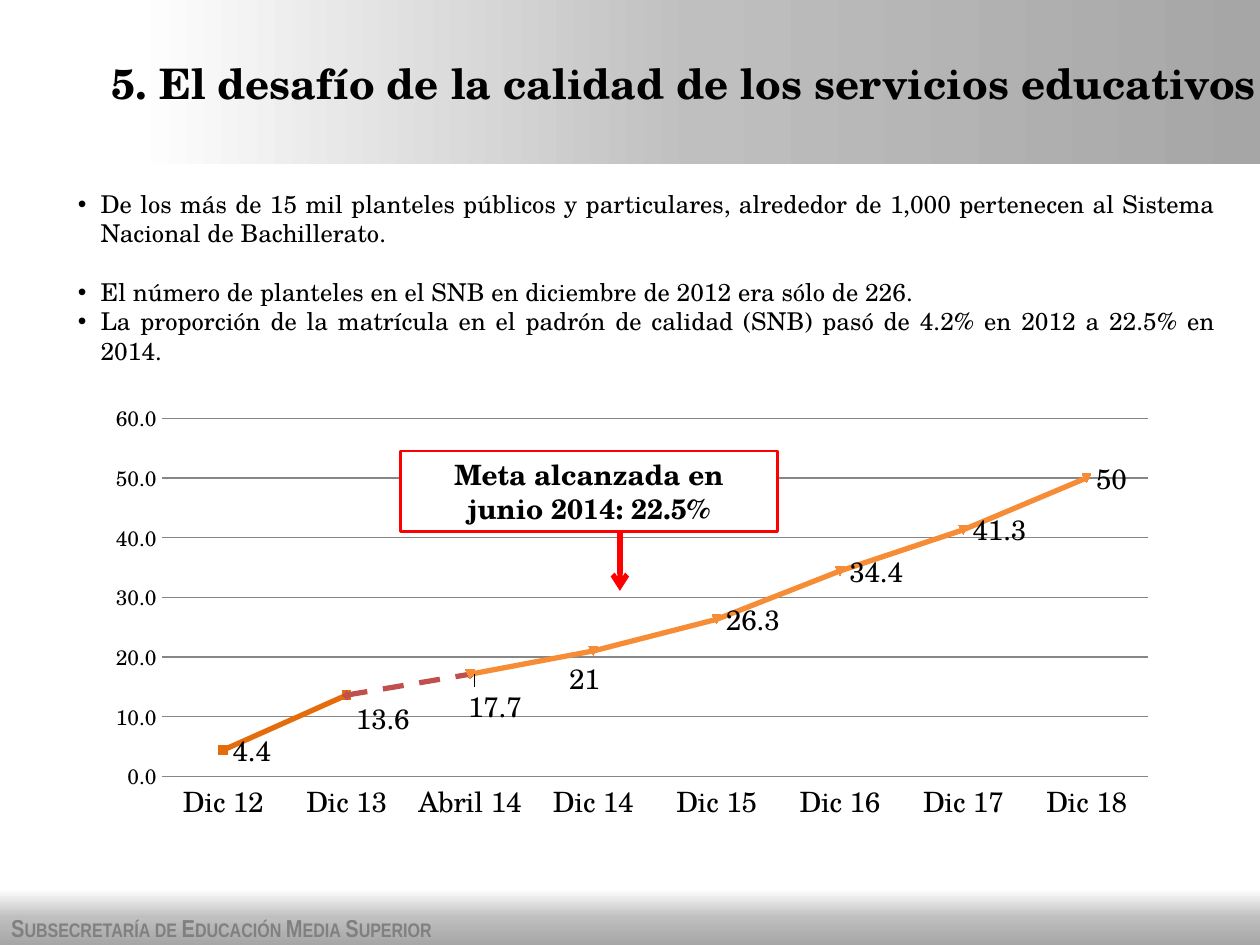
from lxml.etree import SubElement
from pptx import Presentation
from pptx.chart.data import CategoryChartData
from pptx.dml.color import RGBColor
from pptx.enum.chart import XL_CHART_TYPE as ChartType, XL_LABEL_POSITION as LabelPosition
from pptx.enum.chart import XL_MARKER_STYLE as MarkerStyle, XL_TICK_MARK as TickMark
from pptx.enum.dml import MSO_LINE as Dash
from pptx.enum.shapes import MSO_CONNECTOR as Connector, MSO_SHAPE as Shape
from pptx.enum.text import MSO_ANCHOR as Anchor, PP_ALIGN as Align
from pptx.oxml import parse_xml
from pptx.oxml.ns import nsdecls, qn
from pptx.util import Inches, Pt

# The slide is a grid of square cells, ten to the inch
COLUMNS, ROWS = 100, 75
CELL = Inches(0.1)
SERIF = "TeX Gyre Schola"
BLACK, WHITE, RED, GRID_GREY = "000000", "FFFFFF", "FF0000", "868686"

BULLETS = [
    ("De los más de 15 mil planteles públicos y particulares, alrededor de 1,000 "
     "pertenecen al Sistema Nacional de Bachillerato.", 0),
    ("El número de planteles en el SNB en diciembre de 2012 era sólo de 226.", 16.75),
    ("La proporción de la matrícula en el padrón de calidad (SNB) pasó de 4.2% "
     "en 2012 a 22.5% en 2014.", 0),
]
CATEGORIES = ["Dic 12", "Dic 13", "Abril 14", "Dic 14", "Dic 15", "Dic 16", "Dic 17", "Dic 18"]
# Name, values, colour, dash
SERIES = [
    ("Series 1", [4.4, 13.6] + [None] * 6, "E46C0A", None),
    ("Series 2", [None, 13.6, 17.1] + [None] * 5, "C0504D", Dash.DASH),
    ("Series 3", [None, None, 17.1, 21, 26.3, 34.4, 41.3, 50], "F68D36", None),
]
# Series, point, shift as shares of the chart, own wording
MOVED_LABELS = [(1, 1, 0, 0.05, None), (1, 2, -0.01, 0.07, "17.7"), (2, 3, -0.03, 0.06, None)]
HIDDEN_LABELS = [(0, 1), (2, 2)]


def color(hex_code):
    return RGBColor.from_string(hex_code)


def grid(*cells):
    return [int(cell * CELL) for cell in cells]


def style_font(font, size, name=SERIF, fill=BLACK, bold=False):
    font.size, font.name, font.bold = Pt(size), name, bold
    font.color.rgb = color(fill)


def style_line(line, fill, width):
    line.color.rgb = color(fill)
    line.width = Pt(width)


def write(paragraph, text, align=Align.LEFT, small_caps=False, **font_format):
    run = paragraph.add_run()
    run.text = text
    paragraph.alignment = align
    style_font(run.font, **font_format)
    if small_caps:
        run.font._element.set("cap", "small")


def add_text_box(slide, box, anchor=Anchor.TOP):
    frame = slide.shapes.add_textbox(*grid(*box)).text_frame
    frame.word_wrap = True
    frame.vertical_anchor = anchor
    return frame


def add_rectangle(slide, box):
    shape = slide.shapes.add_shape(Shape.RECTANGLE, *grid(*box))
    shape.shadow.inherit = False
    return shape


def add_gradient_band(slide, box, angle):
    band = add_rectangle(slide, box)
    band.line.fill.background()
    stops = "".join(
        f'<a:gs pos="{share * 1000}"><a:srgbClr val="{shade}"/></a:gs>'
        for share, shade in [(0, WHITE), (50, "BFBFBF"), (100, "A6A6A6")])
    band._element.spPr.find(qn("a:prstGeom")).addnext(parse_xml(
        f'<a:gradFill {nsdecls("a")} rotWithShape="1"><a:gsLst>{stops}</a:gsLst>'
        f'<a:lin ang="{angle * 60000}" scaled="0"/></a:gradFill>'))


def add_arrow(slide, *ends):
    arrow = slide.shapes.add_connector(Connector.STRAIGHT, *grid(*ends))
    style_line(arrow.line, RED, 3)
    SubElement(arrow.line._get_or_add_ln(), qn("a:tailEnd"), type="arrow")
    SubElement(arrow._element.spPr, qn("a:effectLst"))


def add_bullets(slide, box, items):
    frame = add_text_box(slide, box)
    for index, (text, gap) in enumerate(items):
        paragraph = frame.add_paragraph() if index else frame.paragraphs[0]
        properties = paragraph._element.get_or_add_pPr()
        properties.set("marL", str(Inches(0.5)))
        properties.set("indent", str(Inches(-0.18)))
        SubElement(properties, qn("a:buFont"), typeface="Arial")
        SubElement(properties, qn("a:buChar"), char="•")
        paragraph.space_before = Pt(gap)
        write(paragraph, text, align=Align.JUSTIFY, size=14)


def manual_layout(**values):
    items = "".join(f'<c:{key} val="{value}"/>' for key, value in values.items())
    return parse_xml(f'<c:layout {nsdecls("c")}><c:manualLayout>{items}'
                     '</c:manualLayout></c:layout>')


def label_element(series, point):
    series.points[point].data_label.position = LabelPosition.RIGHT
    labels = series.data_labels._element
    return next(label for label in labels.findall(qn("c:dLbl"))
                if label.find(qn("c:idx")).get("val") == str(point))


def move_label(series, point, shift_x, shift_y, text):
    label = series.points[point].data_label
    if text:
        write(label.text_frame.paragraphs[0], text, size=16)
    else:
        style_font(label.font, 16)
    index = label_element(series, point).find(qn("c:idx"))
    index.addnext(manual_layout(x=shift_x, y=shift_y))


def hide_label(series, point):
    label = label_element(series, point)
    for child in list(label)[1:]:
        label.remove(child)
    SubElement(label, qn("c:delete"), val="1")


def style_series(series, fill, dash):
    series.smooth = False
    style_line(series.format.line, fill, 3)
    if dash:
        series.format.line.dash_style = dash
    marker = series.marker
    marker.style, marker.size = MarkerStyle.AUTOMATIC, 5
    marker.format.fill.solid()
    marker.format.fill.fore_color.rgb = color(fill)
    marker.format.line.color.rgb = color(fill)
    labels = series.data_labels
    labels.show_value = True
    labels.position = LabelPosition.RIGHT
    style_font(labels.font, 16)


def style_axes(chart):
    for axis, size in [(chart.category_axis, 16), (chart.value_axis, 12)]:
        axis.major_tick_mark = axis.minor_tick_mark = TickMark.NONE
        style_font(axis.tick_labels.font, size)
    style_line(chart.category_axis.format.line, GRID_GREY, 0.75)
    value_axis = chart.value_axis
    value_axis.minimum_scale, value_axis.maximum_scale, value_axis.major_unit = 0, 60, 10
    value_axis.tick_labels.number_format = "0.0"
    value_axis.tick_labels.number_format_is_linked = False
    value_axis.format.line.fill.background()
    style_line(value_axis.major_gridlines.format.line, GRID_GREY, 0.75)


def add_line_chart(slide, box):
    data = CategoryChartData()
    data.categories = CATEGORIES
    for name, values, _, _ in SERIES:
        data.add_series(name, values)
    chart = slide.shapes.add_chart(ChartType.LINE_MARKERS, *grid(*box), data).chart
    chart.has_title = chart.has_legend = False
    style_font(chart.font, 10, name="Calibri")
    plot = chart.plots[0]
    plot.vary_by_categories = False
    style_axes(chart)
    for series, (_, _, fill, dash) in zip(plot.series, SERIES):
        style_series(series, fill, dash)
    for series, *label in MOVED_LABELS:
        move_label(plot.series[series], *label)
    for series, point in HIDDEN_LABELS:
        hide_label(plot.series[series], point)
    area = chart._chartSpace.chart.plotArea
    for layout in area.findall(qn("c:layout")):
        area.remove(layout)
    area.insert(0, manual_layout(layoutTarget="inner", xMode="edge", yMode="edge",
                                 x=0.07, y=0.03, w=0.88, h=0.77))


def add_callout(slide, box, text):
    callout = add_rectangle(slide, box)
    callout.fill.solid()
    callout.fill.fore_color.rgb = color(WHITE)
    style_line(callout.line, RED, 1.5)
    callout.text_frame.word_wrap = True
    write(callout.text_frame.paragraphs[0], text, align=Align.CENTER, size=16, bold=True)


def main():
    presentation = Presentation()
    presentation.slide_width, presentation.slide_height = grid(COLUMNS, ROWS)
    slide = presentation.slides.add_slide(presentation.slide_layouts[6])

    # Footer band and header band
    add_gradient_band(slide, (0, 70.6, COLUMNS, 4.4), angle=90)
    footer = add_text_box(slide, (-0.1, 72, 64.6, 3.4))
    write(footer.paragraphs[0], "Subsecretaría de Educación Media Superior", size=14,
          name="Arial Narrow", fill="808080", bold=True, small_caps=True)
    add_gradient_band(slide, (10.6, 0, 89.4, 13), angle=0)
    title = add_text_box(slide, (6.5, 0.2, 95.5, 12.7), Anchor.MIDDLE)
    write(title.paragraphs[0], "5. El desafío de la calidad de los servicios educativos",
          align=Align.CENTER, size=24, bold=True)

    # Chart with the callout over it
    add_line_chart(slide, (6.6, 32, 89, 37))
    add_arrow(slide, 49.2, 42.2, 49.2, 46.9)
    add_callout(slide, (31.8, 35.8, 29.9, 6.4), "Meta alcanzada en junio 2014: 22.5%")

    # Key facts
    add_bullets(slide, (2, 14.5, 95.5, 15.1), BULLETS)
    presentation.save("out.pptx")


if __name__ == "__main__":
    main()
